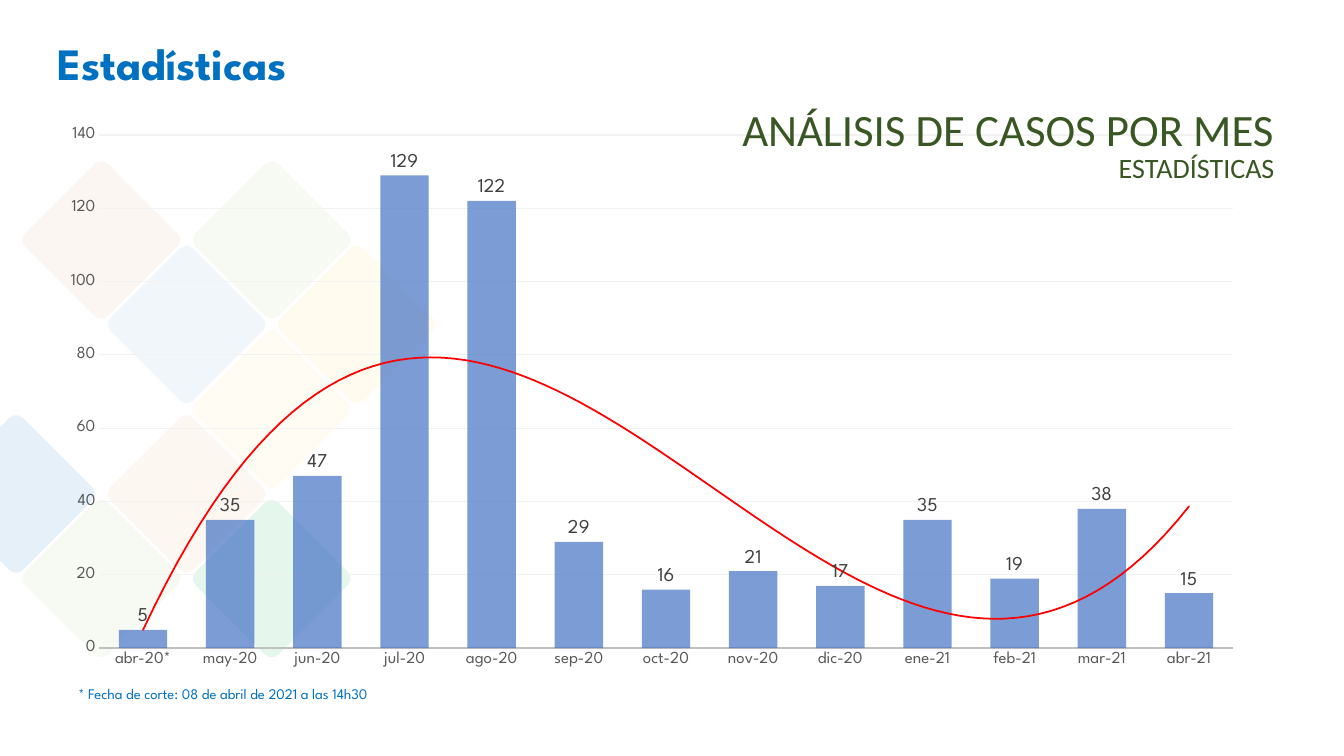
from lxml.etree import SubElement
from pptx import Presentation
from pptx.chart.data import CategoryChartData
from pptx.dml.color import RGBColor
from pptx.enum.chart import XL_CHART_TYPE, XL_LABEL_POSITION, XL_TICK_MARK
from pptx.enum.shapes import MSO_SHAPE
from pptx.enum.text import MSO_AUTO_SIZE, PP_ALIGN
from pptx.oxml import parse_xml
from pptx.oxml.ns import nsdecls, qn
from pptx.util import Inches, Pt

WIDTH, HEIGHT = Inches(13.33), Inches(7.5)
SPARTAN, CALIBRI = "League Spartan", "Calibri"
COLORS = {
    "blue": "0070C0", "heading": "385723", "bar": "4472C4", "trend": "FF0000",
    "axis_text": "595959", "axis_line": "BFBFBF", "grid": "F2F2F2",
    "label": "404040", "black": "000000", "sage": "A9D18E", "ice": "DEEBF7",
    "cream": "FFE699", "peach": "F4B183", "green": "00B050",
    "gold": "FFD966", "rust": "C45003",
}
TILES = [
    (3, 0, "sage", 10), (2, 1, "ice", 41), (0, 3, "blue", 10),
    (3, 2, "cream", 10), (2, 3, "peach", 10), (3, 4, "green", 10),
    (1, 4, "sage", 10), (4, 1, "gold", 10), (1, 0, "rust", 5),
]
MONTHS = ["abr-20*", "may-20", "jun-20", "jul-20", "ago-20", "sep-20", "oct-20",
          "nov-20", "dic-20", "ene-21", "feb-21", "mar-21", "abr-21"]
CASES = [5, 35, 47, 129, 122, 29, 16, 21, 17, 35, 19, 38, 15]


def rgb(name):
    return RGBColor.from_string(COLORS[name])


def col(percent):
    return round(WIDTH * percent / 100)


def row(percent):
    return round(HEIGHT * percent / 100)


def box(x, y, w, h):
    return col(x), row(y), col(w), row(h)


def fill_clear(fill, spPr, color, opacity):
    fill.solid()
    fill.fore_color.rgb = rgb(color)
    clr = spPr.find(qn("a:solidFill")).find(qn("a:srgbClr"))
    SubElement(clr, qn("a:alpha")).set("val", str(opacity * 1000))


def style_font(font, name, size, color, bold=False):
    font.name, font.size, font.bold = name, Pt(size), bold
    font.color.rgb = rgb(color)


def add_tile(slide, column, line, color, opacity):
    side = col(8.7)
    sp = slide.shapes.add_shape(
        MSO_SHAPE.ROUNDED_RECTANGLE,
        col(-3.15 + 6.34 * column), row(24 + 11.2 * line), side, side)
    sp.adjustments[0] = 0.08
    sp.rotation = 315
    sp.shadow.inherit = False
    sp.line.fill.background()
    fill_clear(sp.fill, sp._element.spPr, color, opacity)


def add_text(slide, place, text, font, size, color, bold=False,
             align=PP_ALIGN.LEFT, spacing=None):
    tf = slide.shapes.add_textbox(*place).text_frame
    tf.word_wrap = True
    tf.auto_size = MSO_AUTO_SIZE.SHAPE_TO_FIT_TEXT
    p = tf.paragraphs[0]
    p.text, p.alignment, p.line_spacing = text, align, spacing
    style_font(p.font, font, size, color, bold)


def style_axis(axis):
    axis.major_tick_mark = axis.minor_tick_mark = XL_TICK_MARK.NONE
    style_font(axis.tick_labels.font, SPARTAN, 12, "axis_text")


def add_trend(series):
    series._element.find(qn("c:cat")).addprevious(parse_xml(
        f'<c:trendline {nsdecls("c", "a")}><c:spPr><a:ln w="{Pt(1.25)}" cap="rnd">'
        f'<a:solidFill><a:srgbClr val="{COLORS["trend"]}"/></a:solidFill></a:ln></c:spPr>'
        '<c:trendlineType val="poly"/><c:order val="3"/>'
        '<c:dispRSqr val="0"/><c:dispEq val="0"/></c:trendline>'))


def set_plot_area(chart, x, y, w, h):
    area = chart._chartSpace.chart.plotArea
    for old in area.findall(qn("c:layout")):
        area.remove(old)
    sizes = "".join(f'<c:{tag} val="{val}"/>' for tag, val in zip("xywh", (x, y, w, h)))
    area.insert(0, parse_xml(
        f'<c:layout {nsdecls("c")}><c:manualLayout><c:layoutTarget val="inner"/>'
        f'<c:xMode val="edge"/><c:yMode val="edge"/>{sizes}</c:manualLayout></c:layout>'))


def add_cases_chart(slide, place):
    data = CategoryChartData()
    data.categories = MONTHS
    data.add_series("Series 1", CASES)
    chart = slide.shapes.add_chart(XL_CHART_TYPE.COLUMN_CLUSTERED, *place, data).chart
    chart.has_legend = chart.has_title = False
    style_font(chart.font, SPARTAN, 10, "black")
    set_plot_area(chart, 0.043, 0.034, 0.936, 0.911)

    months, values = chart.category_axis, chart.value_axis
    style_axis(months)
    style_axis(values)
    months.format.line.color.rgb = rgb("axis_line")
    months.format.line.width = Pt(1.25)
    values.minimum_scale, values.maximum_scale, values.major_unit = 0, 140, 20
    values.format.line.fill.background()
    values.major_gridlines.format.line.color.rgb = rgb("grid")
    values.major_gridlines.format.line.width = Pt(0.75)

    plot = chart.plots[0]
    plot.gap_width, plot.overlap, plot.vary_by_categories = 80, 25, False
    series = plot.series[0]
    fill = series.format.fill
    fill_clear(fill, series._element.spPr, "bar", 70)
    labels = series.data_labels
    labels.show_value = True
    labels.position = XL_LABEL_POSITION.OUTSIDE_END
    style_font(labels.font, SPARTAN, 14, "label")
    add_trend(series)


def main():
    prs = Presentation()
    prs.slide_width, prs.slide_height = WIDTH, HEIGHT
    slide = prs.slides.add_slide(prs.slide_layouts[6])
    for tile in TILES:
        add_tile(slide, *tile)
    add_text(slide, box(3.53, 4, 83.4, 8.53), "Estadísticas", SPARTAN, 32, "blue", True)
    add_text(slide, box(5.1, 89.87, 51.75, 3.87),
             "* Fecha de corte: 08 de abril de 2021 a las 14h30", SPARTAN, 10.5, "blue")
    add_cases_chart(slide, box(3.53, 15.33, 90.08, 74.53))
    for place, text, size in [
        (box(37.58, 13.2, 57.98, 8.13), "ANÁLISIS DE CASOS POR MES", 32),
        (box(57.83, 16.93, 37.73, 7.33), "ESTADÍSTICAS", 20),
    ]:
        add_text(slide, place, text, CALIBRI, size, "heading",
                 align=PP_ALIGN.RIGHT, spacing=Pt(36.5))
    prs.save("out.pptx")


if __name__ == "__main__":
    main()
